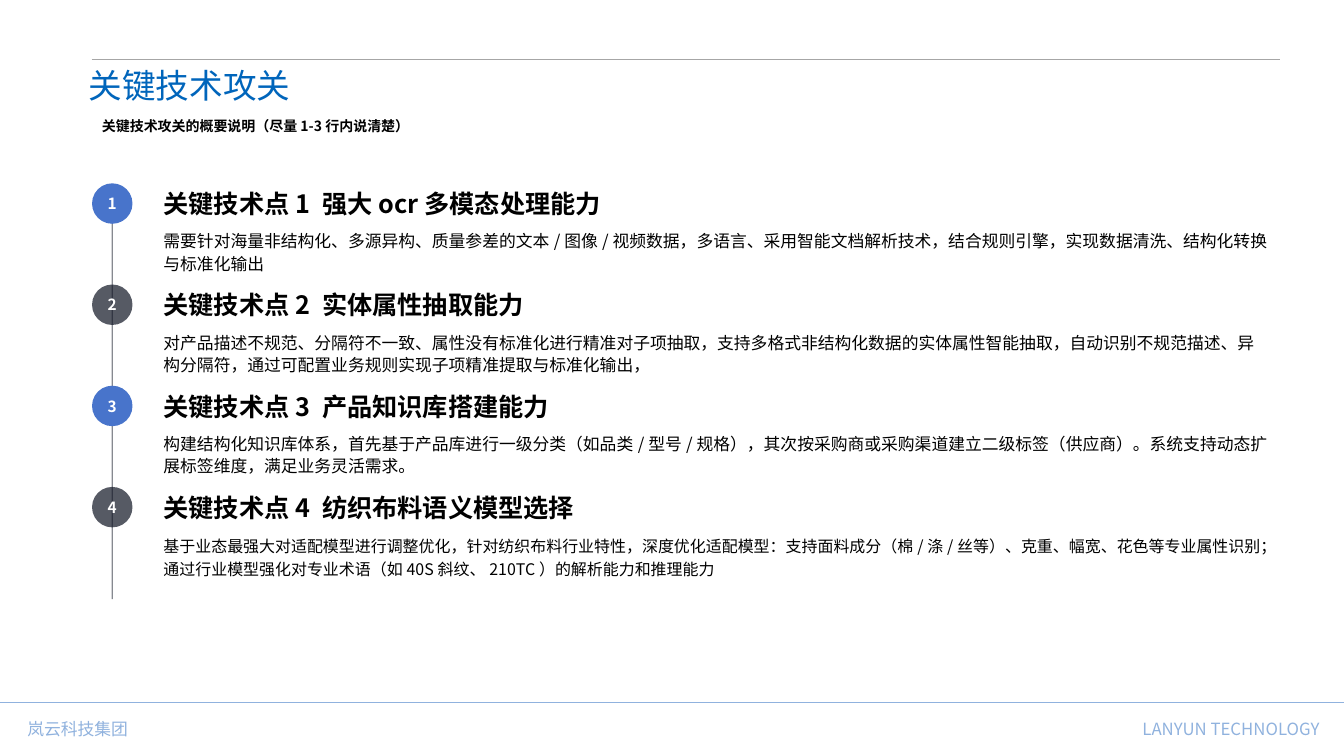
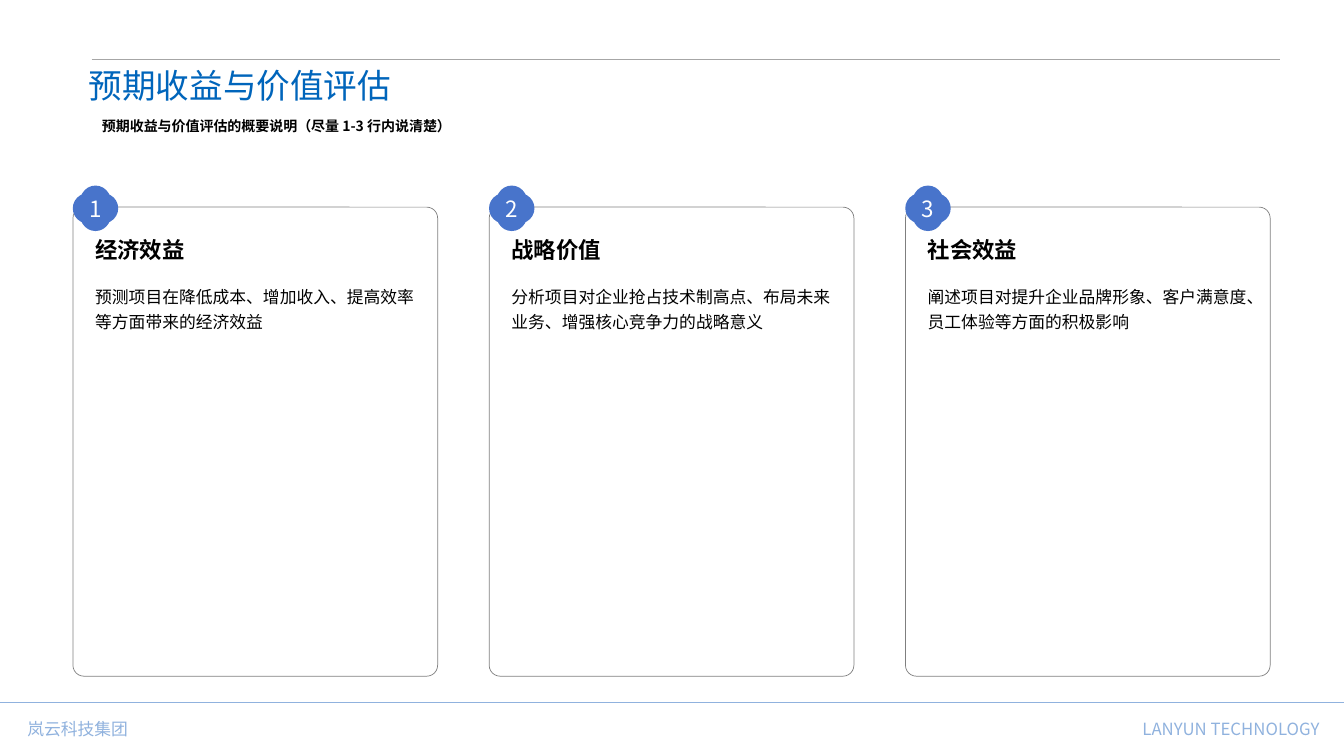
"""Build two slides: key technical points and expected benefits."""
from math import cos, radians, sin

from lxml.etree import SubElement
from pptx import Presentation
from pptx.dml.color import RGBColor
from pptx.enum.shapes import MSO_CONNECTOR, MSO_SHAPE
from pptx.enum.text import MSO_ANCHOR as Anchor, MSO_AUTO_SIZE, PP_ALIGN as Align
from pptx.oxml.ns import qn
from pptx.util import Cm, Pt

FONT = "Noto Sans CJK SC"
COLORS = {
    "title": "0065BB",
    "accent": "4874CB",
    "dark": "0F1423",
    "footer": "90B2DE",
    "rule": "A6A6A6",
    "text": "000000",
    "white": "FFFFFF",
}


def write(shape, text, size, color="text", bold=False, align=Align.LEFT,
          anchor=Anchor.TOP, spacing=1.0, wrap=True):
    """Put one styled paragraph into a shape."""
    frame = shape.text_frame
    frame.text = text
    frame.word_wrap = wrap
    frame.auto_size = MSO_AUTO_SIZE.NONE
    frame.vertical_anchor = anchor
    paragraph = frame.paragraphs[0]
    paragraph.alignment = align
    paragraph.line_spacing = spacing
    font = paragraph.runs[0].font
    font.name = FONT
    font.size = Pt(size)
    font.bold = bold
    font.color.rgb = RGBColor.from_string(COLORS[color])
    SubElement(font._element, qn("a:ea")).set("typeface", FONT)


def set_opacity(shape, percent):
    """Make the fill and line colours of a shape translucent."""
    for color in shape.element.spPr.iter(qn("a:srgbClr")):
        SubElement(color, qn("a:alpha")).set("val", str(percent * 1000))


presentation = Presentation()
presentation.slide_width = Cm(33.87)
presentation.slide_height = Cm(19.05)
layout = presentation.slide_layouts[5]

headings = [
    ("关键技术攻关", "关键技术攻关的概要说明（尽量1-3行内说清楚）"),
    ("预期收益与价值评估", "预期收益与价值评估的概要说明（尽量1-3行内说清楚）"),
]
slides = []
for heading, summary in headings:
    slide = presentation.slides.add_slide(layout)
    title = slide.shapes.title
    title.left, title.top, title.width, title.height = Cm(1.98), Cm(1.52), Cm(28.32), Cm(1.27)
    write(title, heading, 24, "title")
    summary_box = slide.shapes.add_textbox(Cm(2.32), Cm(2.84), Cm(29.92), Cm(0.69))
    write(summary_box, summary, 10, bold=True)
    slides.append(slide)
technology_slide, benefit_slide = slides

shapes = technology_slide.shapes
rules = [
    (2.31, 1.5, 32.26, 1.5, "rule", 100, True),
    (0, 17.7, 33.87, 17.7, "footer", 100, True),
    (2.83, 4.72, 2.83, 15.1, "dark", 50, False),
]
for left, top, right, bottom, color, opacity, shared in rules:
    rule = shapes.add_connector(MSO_CONNECTOR.STRAIGHT, Cm(left), Cm(top), Cm(right), Cm(bottom))
    rule.line.color.rgb = RGBColor.from_string(COLORS[color])
    rule.line.width = Pt(1)
    if opacity < 100:
        set_opacity(rule, opacity)
    SubElement(rule.element.spPr, qn("a:effectLst"))
    if shared:
        layout.shapes.element.append(rule.element)

footers = [
    (0.44, 9.58, "岚云科技集团", Align.LEFT),
    (26.37, 7.14, "LANYUN TECHNOLOGY", Align.RIGHT),
]
for left, width, text, align in footers:
    footer = shapes.add_textbox(Cm(left), Cm(17.98), Cm(width), Cm(0.76))
    write(footer, text, 12, "footer", align=align)
    layout.shapes.element.append(footer.element)

points = [
    ("强大ocr多模态处理能力", 12, 1.1,
     "需要针对海量非结构化、多源异构、质量参差的文本/图像/视频数据，多语言、采用智能文档解析技术，"
     "结合规则引擎，实现数据清洗、结构化转换与标准化输出"),
    ("实体属性抽取能力", 12, 1.1,
     "对产品描述不规范、分隔符不一致、属性没有标准化进行精准对子项抽取，支持多格式非结构化数据的"
     "实体属性智能抽取，自动识别不规范描述、异构分隔符，通过可配置业务规则实现子项精准提取与标准化输出，"),
    ("产品知识库搭建能力", 12, 1.1,
     "构建结构化知识库体系，首先基于产品库进行一级分类（如品类/型号/规格），其次按采购商或采购渠道"
     "建立二级标签（供应商）。系统支持动态扩展标签维度，满足业务灵活需求。"),
    ("纺织布料语义模型选择", 11.4, 1.2,
     "基于业态最强大对适配模型进行调整优化，针对纺织布料行业特性，深度优化适配模型：支持面料成分"
     "（棉/涤/丝等）、克重、幅宽、花色等专业属性识别；通过行业模型强化对专业术语"
     "（如40S斜纹、210TC）的解析能力和推理能力"),
]
for index, (name, size, spacing, detail) in enumerate(points):
    number = index + 1
    top = 4.62 + 2.55 * index
    color, opacity = [("accent", 100), ("dark", 70)][index % 2]
    marker = shapes.add_shape(MSO_SHAPE.OVAL, Cm(2.32), Cm(top), Cm(1.02), Cm(1.02))
    marker.shadow.inherit = False
    marker.fill.solid()
    marker.fill.fore_color.rgb = RGBColor.from_string(COLORS[color])
    marker.line.fill.background()
    if opacity < 100:
        set_opacity(marker, opacity)
    frame = marker.text_frame
    frame.margin_left = frame.margin_right = frame.margin_top = frame.margin_bottom = 0
    write(marker, str(number), 11, "white", True, Align.CENTER, Anchor.MIDDLE)
    name_box = shapes.add_textbox(Cm(3.87), Cm(top), Cm(15.75), Cm(1.02))
    write(name_box, f"关键技术点{number} {name}", 18, bold=True, anchor=Anchor.BOTTOM)
    detail_box = shapes.add_textbox(Cm(3.87), Cm(top + 1.03), Cm(28.38), Cm(1.35))
    write(detail_box, detail, size, spacing=spacing)

benefits = [
    ("经济效益", "预测项目在降低成本、增加收入、提高效率等方面带来的经济效益"),
    ("战略价值", "分析项目对企业抢占技术制高点、布局未来业务、增强核心竞争力的战略意义"),
    ("社会效益", "阐述项目对提升企业品牌形象、客户满意度、员工体验等方面的积极影响"),
]
LOBE_OFFSET, LOBE_RADIUS, LOBE_SWEEP = 0.19, 0.38, 66
shapes = benefit_slide.shapes
for index, (name, detail) in enumerate(benefits):
    left = 1.84 + 10.49 * index
    card = shapes.add_shape(MSO_SHAPE.ROUNDED_RECTANGLE, Cm(left), Cm(5.22), Cm(9.19), Cm(11.82))
    card.adjustments[0] = 0.03
    card.shadow.inherit = False
    card.fill.background()
    card.line.color.rgb = RGBColor.from_string(COLORS["text"])
    card.line.width = Pt(0.5)
    set_opacity(card, 50)
    name_box = shapes.add_textbox(Cm(left + 0.31), Cm(5.43), Cm(8.61), Cm(1.57))
    write(name_box, name, 16, bold=True, anchor=Anchor.MIDDLE, spacing=1.2)
    detail_box = shapes.add_textbox(Cm(left + 0.31), Cm(7.01), Cm(8.61), Cm(9.68))
    write(detail_box, detail, 12, spacing=1.2)

    center_x, center_y = left + LOBE_OFFSET + LOBE_RADIUS, 5.25
    outline, arc_starts = [], []
    for axis in range(0, 360, 90):
        for turn in (0, LOBE_SWEEP):
            angle = radians(axis + turn)
            x = center_x + LOBE_OFFSET * cos(radians(axis)) + LOBE_RADIUS * cos(angle)
            y = center_y + LOBE_OFFSET * sin(radians(axis)) + LOBE_RADIUS * sin(angle)
            outline.append((Cm(x), Cm(y)))
        arc_starts += [axis, axis + 90 - LOBE_SWEEP]
    builder = shapes.build_freeform(*outline[0])
    builder.add_line_segments(outline[1:] + outline[:1], close=True)
    badge = builder.convert_to_shape()
    for line, start in zip(list(badge.element.iter(qn("a:lnTo"))), arc_starts):
        outline_path = line.getparent()
        arc = SubElement(outline_path, qn("a:arcTo"))
        arc.set("wR", str(Cm(LOBE_RADIUS)))
        arc.set("hR", str(Cm(LOBE_RADIUS)))
        arc.set("stAng", str(start * 60000))
        arc.set("swAng", str(LOBE_SWEEP * 60000))
        outline_path.replace(line, arc)
    badge.shadow.inherit = False
    badge.fill.solid()
    badge.fill.fore_color.rgb = RGBColor.from_string(COLORS["accent"])
    badge.line.fill.background()
    write(badge, str(index + 1), 16, "white", align=Align.CENTER, anchor=Anchor.MIDDLE, wrap=False)

presentation.save("out.pptx")
